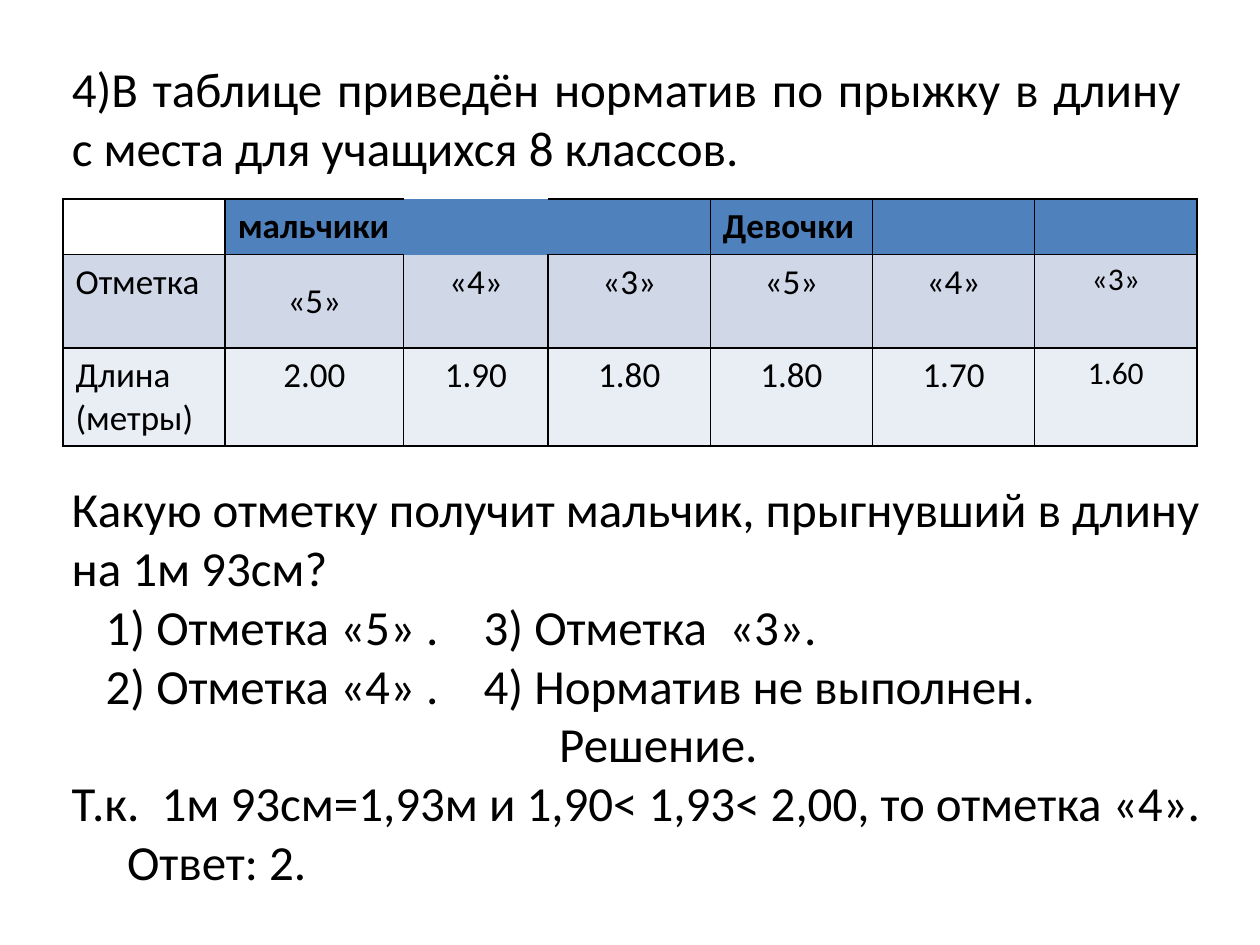
import pptx
import pptx.util
import pptx.dml.color
import pptx.enum.text
import pptx.oxml
import pptx.oxml.ns

Inches, Pt = pptx.util.Inches, pptx.util.Pt
Align, Anchor = pptx.enum.text.PP_ALIGN, pptx.enum.text.MSO_ANCHOR

COLORS = {"ink": "000000", "paper": "FFFFFF", "header": "4F81BD",
          "marks": "D0D8E8", "lengths": "E9EDF4"}
FONT = "Calibri"
COLUMNS = [1.29, 1.42, 1.15, 1.29, 1.29, 1.29, 1.29]
ROWS = [0.44, 0.74, 0.78]
NORMS = [
    ["", "мальчики", "", "", "Девочки", "", ""],
    ["Отметка", "«5»", "«4»", "«3»", "«5»", "«4»", "«3»"],
    ["Длина\n(метры)", "2.00", "1.90", "1.80", "1.80", "1.70", "1.60"],
]
OPEN_EDGES = {(0, 1): "R", (0, 2): "LRTB", (0, 3): "L", (1, 2): "T"}
SOLUTION = [
    ("Какую отметку получит мальчик, прыгнувший в длину на 1м 93см?", 0),
    ("1) Отметка «5» .\t3) Отметка  «3».", 0.27),
    ("2) Отметка «4» .\t4) Норматив не выполнен.", 0.27),
    ("Решение.", 3.87),
    ("Т.к.  1м 93см=1,93м и 1,90˂ 1,93˂ 2,00, то отметка «4».", 0),
    ("Ответ: 2.", 0.44),
]
SECOND_OPTION_TAB = 4.67


def color(name):
    return pptx.dml.color.RGBColor.from_string(COLORS[name])


def style(para, size, align=None, bold=False):
    para.alignment = align
    para.font.name = FONT
    para.font.size = Pt(size)
    para.font.bold = bold
    para.font.color.rgb = color("ink")


def set_borders(cell, open_edges):
    properties = cell._tc.get_or_add_tcPr()
    for position, edge in enumerate("LRTB"):
        paint = ("<a:noFill/>" if edge in open_edges else
                 f'<a:solidFill><a:srgbClr val="{COLORS["ink"]}"/></a:solidFill>')
        properties.insert(position, pptx.oxml.parse_xml(
            f'<a:ln{edge} {pptx.oxml.ns.nsdecls("a")} w="{Pt(1)}">{paint}</a:ln{edge}>'))


def place_title(page, box):
    title = page.shapes.title
    title.left, title.top, title.width, title.height = map(Inches, box)
    frame = title.text_frame
    frame.text = "4)В таблице приведён норматив по прыжку в длину с места для учащихся 8 классов."
    frame.vertical_anchor = Anchor.MIDDLE
    style(frame.paragraphs[0], 28, Align.JUSTIFY)


def place_norms(page, box):
    table = page.shapes.add_table(len(ROWS), len(COLUMNS), *map(Inches, box)).table
    for column, share in zip(table.columns, COLUMNS):
        column.width = Inches(box[2] * share / sum(COLUMNS))
    for row, share in zip(table.rows, ROWS):
        row.height = Inches(box[3] * share / sum(ROWS))
    for r, (texts, fill) in enumerate(zip(NORMS, ("header", "marks", "lengths"))):
        for c, text in enumerate(texts):
            cell = table.cell(r, c)
            cell.text = text
            cell.fill.solid()
            cell.fill.fore_color.rgb = color("paper" if r == c == 0 else fill)
            align = Align.CENTER if r and c else Align.LEFT
            size = 18 if r and c == len(COLUMNS) - 1 else 20
            for para in cell.text_frame.paragraphs:
                style(para, size, align, bold=r == 0)
            set_borders(cell, OPEN_EDGES.get((r, c), ""))
    table.cell(1, 1).vertical_anchor = Anchor.MIDDLE


def place_solution(page, box):
    frame = page.shapes.add_textbox(*map(Inches, box)).text_frame
    frame.word_wrap = True
    for index, (text, indent) in enumerate(SOLUTION):
        para = frame.add_paragraph() if index else frame.paragraphs[0]
        span = para.add_run()
        span.text = text
        style(para, 28)
        properties = para._p.get_or_add_pPr()
        properties.set("marL", str(Inches(indent)))
        properties.set("indent", "0")
        if "\t" in text:
            tabs = pptx.oxml.parse_xml(
                f'<a:tabLst {pptx.oxml.ns.nsdecls("a")}>'
                f'<a:tab pos="{Inches(SECOND_OPTION_TAB)}" algn="l"/></a:tabLst>')
            properties.insert(0, tabs)


def main():
    deck = pptx.Presentation()
    deck.slide_width, deck.slide_height = Inches(10), Inches(7.5)
    page = deck.slides.add_slide(deck.slide_layouts[5])
    place_title(page, (0.47, 0.31, 9, 1.25))
    place_norms(page, (0.5, 1.58, 9, sum(ROWS)))
    place_solution(page, (0.47, 3.75, 9.53, 3.7))
    deck.save("out.pptx")


if __name__ == "__main__":
    main()
